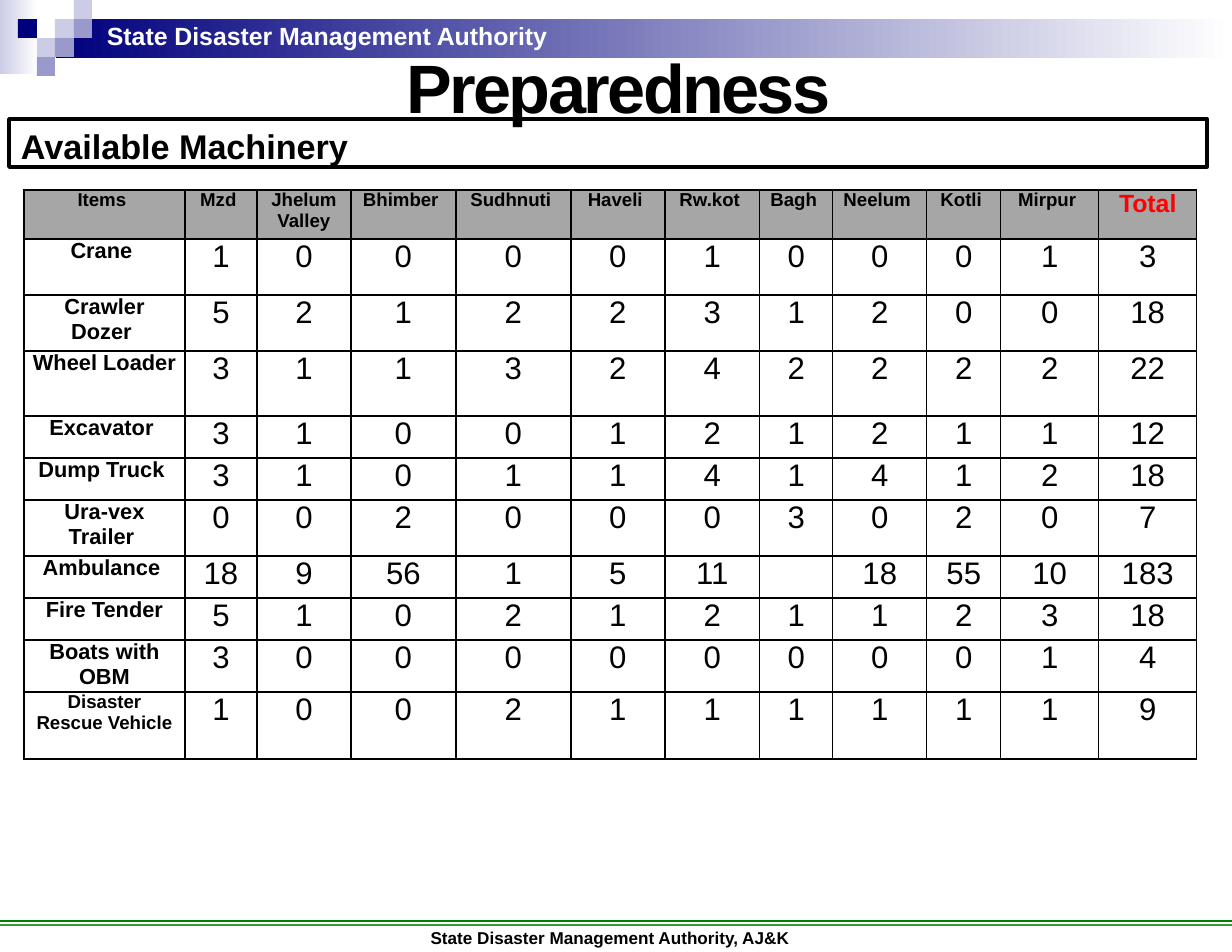
"""Builds the Preparedness slide with its table of available machinery."""
import dataclasses

import lxml.etree
import pptx
import pptx.dml.color
import pptx.enum.shapes
import pptx.enum.text
import pptx.oxml.ns
import pptx.util

FONT = "Arial"
BLACK, WHITE, RED = "000000", "FFFFFF", "FF0000"
NAVY, LAVENDER, PERIWINKLE = "00007D", "CCCCE6", "9999CC"
HEADER_GREY = "A6A6A6"
CENTER = pptx.enum.text.PP_ALIGN.CENTER

SQUARE_X = (18, 37, 55, 74, 92)
SQUARE_Y = (0, 19, 38, 57, 76)

COLUMN_WIDTHS = (161, 72, 94, 105, 115, 94, 95, 73, 94, 74, 98, 98)
HEADERS = ("Items ", "Mzd ", "Jhelum Valley", "Bhimber ", "Sudhnuti ", "Haveli ",
           "Rw.kot ", "Bagh ", "Neelum ", "Kotli ", "Mirpur ", "Total")
HEADER_HEIGHT = 49


@dataclasses.dataclass(frozen=True)
class Box:
    left: int
    top: int
    width: int
    height: int


@dataclasses.dataclass(frozen=True)
class Style:
    size: int
    bold: bool = True
    color: str = BLACK


@dataclasses.dataclass(frozen=True)
class Square:
    column: int
    row: int
    color: str


@dataclasses.dataclass(frozen=True)
class Machine:
    name: str
    height: int
    counts: tuple
    total: int
    size: int = 14


SQUARES = (
    Square(2, 1, LAVENDER), Square(3, 0, LAVENDER), Square(3, 1, PERIWINKLE),
    Square(1, 2, LAVENDER), Square(0, 1, NAVY), Square(2, 2, PERIWINKLE),
    Square(1, 3, PERIWINKLE),
)

MACHINES = (
    Machine("Crane ", 56, (1, 0, 0, 0, 0, 1, 0, 0, 0, 1), 3),
    Machine("Crawler Dozer ", 56, (5, 2, 1, 2, 2, 3, 1, 2, 0, 0), 18),
    Machine("Wheel Loader ", 65, (3, 1, 1, 3, 2, 4, 2, 2, 2, 2), 22),
    Machine("Excavator ", 42, (3, 1, 0, 0, 1, 2, 1, 2, 1, 1), 12),
    Machine("Dump Truck ", 42, (3, 1, 0, 1, 1, 4, 1, 4, 1, 2), 18),
    Machine("Ura-vex Trailer ", 56, (0, 0, 2, 0, 0, 0, 3, 0, 2, 0), 7),
    Machine("Ambulance ", 42, (18, 9, 56, 1, 5, 11, "", 18, 55, 10), 183),
    Machine("Fire Tender", 42, (5, 1, 0, 2, 1, 2, 1, 1, 2, 3), 18),
    Machine("Boats with OBM", 52, (3, 0, 0, 0, 0, 0, 0, 0, 0, 1), 4),
    Machine("Disaster Rescue Vehicle", 67, (1, 0, 0, 2, 1, 1, 1, 1, 1, 1), 9, 12),
)


def px(n: int) -> pptx.util.Emu:
    return pptx.util.Emu(round(n * 914400 / 112))


def rgb(color: str) -> pptx.dml.color.RGBColor:
    return pptx.dml.color.RGBColor.from_string(color)


def place(box: Box) -> tuple:
    return tuple(px(n) for n in dataclasses.astuple(box))


def add_run(p, text: str, style: Style):
    r = p.add_run()
    r.text = text
    r.font.name = FONT
    r.font.size = pptx.util.Pt(style.size)
    r.font.bold = style.bold
    r.font.color.rgb = rgb(style.color)
    return r


def set_insets(tf, x: int, y: int) -> None:
    tf.margin_left = tf.margin_right = px(x)
    tf.margin_top = tf.margin_bottom = px(y)


def add_rect(s, box: Box, *colors: str):
    sp = s.shapes.add_shape(pptx.enum.shapes.MSO_SHAPE.RECTANGLE, *place(box))
    sp.shadow.inherit = False
    sp.line.fill.background()
    if len(colors) == 1:
        sp.fill.solid()
        sp.fill.fore_color.rgb = rgb(colors[0])
    else:
        sp.fill.gradient()
        sp.fill.gradient_angle = 0
        for i, (stop, color) in enumerate(zip(sp.fill.gradient_stops, colors)):
            stop.position = i
            stop.color.rgb = rgb(color)
    return sp


def add_text(s, box: Box, text: str, style: Style, align=None, wrap: bool = True):
    sp = s.shapes.add_textbox(*place(box))
    tf = sp.text_frame
    tf.word_wrap = wrap
    set_insets(tf, 12, 6)
    p = tf.paragraphs[0]
    p.alignment = align
    add_run(p, text, style)
    return sp


def add_rule(s, y: int, color: str) -> None:
    line = s.shapes.add_connector(pptx.enum.shapes.MSO_CONNECTOR.STRAIGHT,
                                  px(0), px(y), px(1232), px(y))
    line.line.color.rgb = rgb(color)
    line.line.width = pptx.util.Pt(1.25)
    lxml.etree.SubElement(line.element.spPr, pptx.oxml.ns.qn("a:effectLst"))


def set_borders(cell) -> None:
    qn = pptx.oxml.ns.qn
    tcPr = cell._tc.get_or_add_tcPr()
    for i, side in enumerate(("a:lnL", "a:lnR", "a:lnT", "a:lnB")):
        ln = lxml.etree.Element(qn(side), w="12700")
        fill = lxml.etree.SubElement(ln, qn("a:solidFill"))
        lxml.etree.SubElement(fill, qn("a:srgbClr"), val=BLACK)
        tcPr.insert(i, ln)


def fill_cell(cell, text: str, style: Style, fill: str = "") -> None:
    set_insets(cell, 8, 0)
    if fill:
        cell.fill.solid()
        cell.fill.fore_color.rgb = rgb(fill)
    else:
        cell.fill.background()
    set_borders(cell)
    p = cell.text_frame.paragraphs[0]
    p.alignment = CENTER
    if text:
        add_run(p, text, style)


def add_machinery(s) -> None:
    heights = (HEADER_HEIGHT, *(m.height for m in MACHINES))
    box = Box(24, 190, sum(COLUMN_WIDTHS), sum(heights))
    table = s.shapes.add_table(len(heights), len(COLUMN_WIDTHS), *place(box)).table
    for column, width in zip(table.columns, COLUMN_WIDTHS):
        column.width = px(width)
    for row, height in zip(table.rows, heights):
        row.height = px(height)
    for c, text in enumerate(HEADERS):
        style = Style(16, color=RED) if text == "Total" else Style(12)
        fill_cell(table.cell(0, c), text, style, HEADER_GREY)
    for r, machine in enumerate(MACHINES, 1):
        fill_cell(table.cell(r, 0), machine.name, Style(machine.size))
        for c, count in enumerate((*machine.counts, machine.total), 1):
            fill_cell(table.cell(r, c), str(count), Style(20, bold=False))


def set_title(s) -> None:
    sp = s.shapes.title
    sp.left, sp.top, sp.width, sp.height = place(Box(54, 53, 1129, 75))
    tf = sp.text_frame
    tf.auto_size = pptx.enum.text.MSO_AUTO_SIZE.NONE
    tf.vertical_anchor = pptx.enum.text.MSO_ANCHOR.BOTTOM
    set_insets(tf, 0, 0)
    p = tf.paragraphs[0]
    p.alignment = CENTER
    p.line_spacing = 0.9
    r = add_run(p, "Preparedness", Style(44))
    r.font._element.set("spc", "-170")
    s.shapes.element.append(sp.element)


def main() -> None:
    prs = pptx.Presentation()
    prs.slide_width, prs.slide_height = px(1232), px(952)
    s = prs.slides.add_slide(prs.slide_layouts[5])
    add_rect(s, Box(0, 0, 38, 74), LAVENDER, WHITE)
    add_rect(s, Box(56, 19, 1176, 39), NAVY, WHITE)
    for q in SQUARES:
        x, y = SQUARE_X[q.column], SQUARE_Y[q.row]
        add_rect(s, Box(x, y, SQUARE_X[q.column + 1] - x, SQUARE_Y[q.row + 1] - y), q.color)
    add_text(s, Box(95, 15, 468, 43), "State Disaster Management Authority",
             Style(16, color=WHITE), wrap=False)
    add_rule(s, 921, "008000")
    add_rule(s, 925, "339933")
    add_text(s, Box(317, 921, 591, 35), "State Disaster Management Authority, AJ&K ",
             Style(11), CENTER)
    sp = add_text(s, Box(9, 119, 1198, 48), "Available Machinery", Style(22))
    sp.fill.solid()
    sp.fill.fore_color.rgb = rgb(WHITE)
    sp.line.color.rgb = rgb(BLACK)
    sp.line.width = pptx.util.Pt(2.25)
    sp.text_frame.paragraphs[0].space_before = pptx.util.Pt(2)
    set_title(s)
    add_machinery(s)
    prs.save("out.pptx")


if __name__ == "__main__":
    main()
